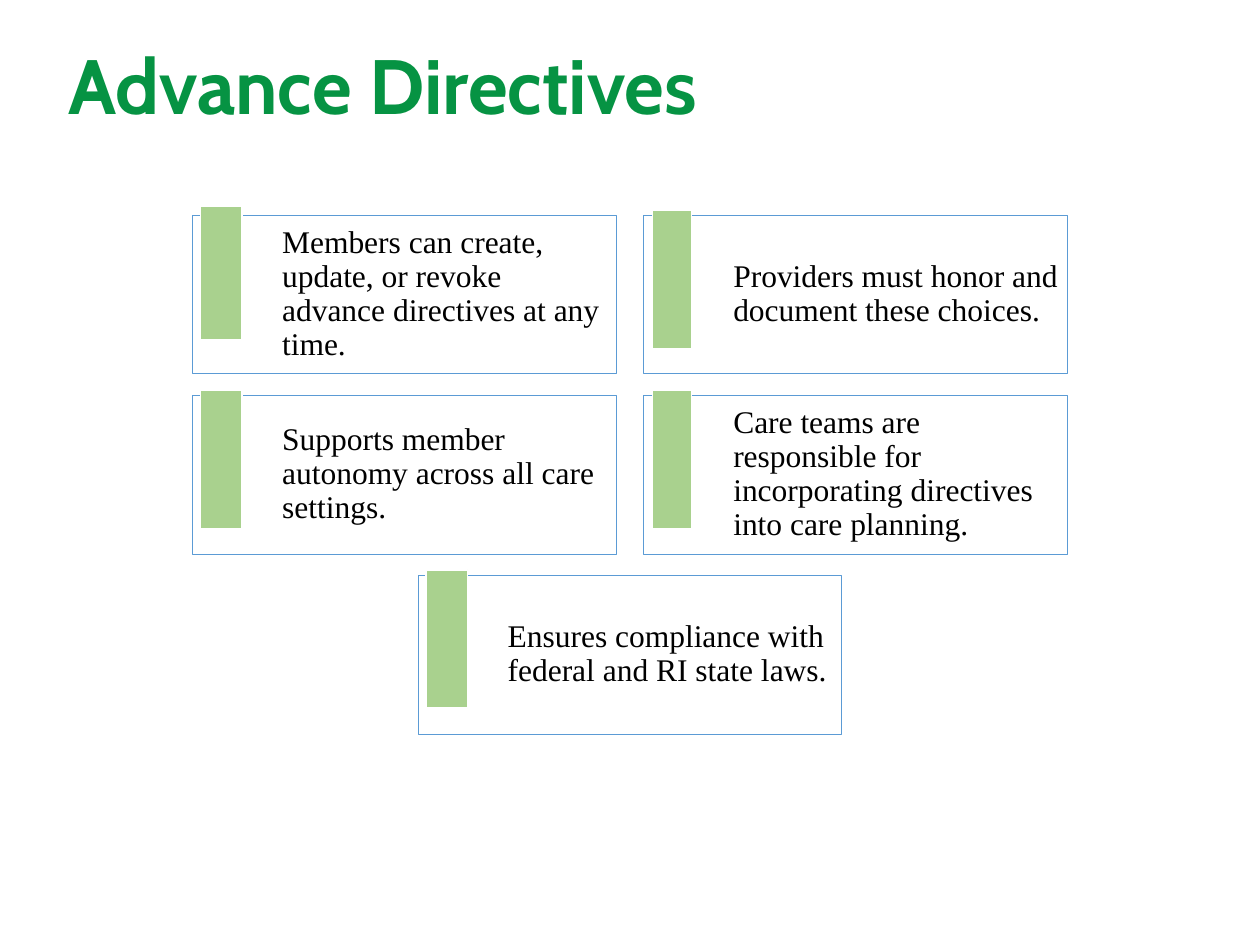
"""Build the Advance Directives slide: a title over centred rows of accented cards."""
from dataclasses import dataclass

from lxml.etree import SubElement
from pptx import Presentation
from pptx.dml.color import RGBColor as RGB
from pptx.enum.shapes import MSO_SHAPE as SHAPE
from pptx.enum.text import MSO_ANCHOR as ANCHOR, MSO_AUTO_SIZE as AUTO, PP_ALIGN as ALIGN
from pptx.oxml.ns import qn
from pptx.util import Pt

TITLE = "Advance Directives"
WIDE, NARROW = 23.6, 22.3
ROWS = [
    [
        {"text": "Members can create, update, or revoke advance directives at any time.",
         "bar": (4.5, -5, WIDE, 76.3)},
        {"text": "Providers must honor and document these choices.",
         "bar": (5, -2.9, NARROW, 79.2)},
    ],
    [
        {"text": "Supports member autonomy across all care settings.",
         "bar": (4.5, -2.9, WIDE, 79.2)},
        {"text": "Care teams are responsible for incorporating directives into care planning.",
         "bar": (5, -2.9, NARROW, 79.2)},
    ],
    [
        {"text": "Ensures compliance with federal and RI state laws.",
         "bar": (4.5, -3.2, WIDE, 79.2)},
    ],
]

SLIDE_W, SLIDE_H = 720, 540
CARD_W, CARD_H = 242, 90.7
GAP_X, GAP_Y = 15.8, 12.2
TOP = 123


@dataclass(frozen=True)
class Theme:
    title_font: str = "Cabin"
    body_font: str = "Times New Roman"
    title_size: float = 44
    body_size: float = 18
    title: str = "069343"
    text: str = "000000"
    card: str = "FFFFFF"
    card_line: str = "5B9BD5"
    bar: str = "A9D18E"
    bar_line: str = "FFFFFF"


THEME = Theme()


def write(sp, text, *, font, size, color, bold=False, insets=(7.2, 3.6, 7.2, 3.6)):
    tf = sp.text_frame
    tf.word_wrap = True
    tf.auto_size = AUTO.NONE
    tf.vertical_anchor = ANCHOR.MIDDLE
    tf.margin_left, tf.margin_top, tf.margin_right, tf.margin_bottom = map(Pt, insets)
    p = tf.paragraphs[0]
    p.alignment = ALIGN.LEFT
    p.line_spacing = 0.9
    r = p.add_run()
    r.text = text
    r.font.name, r.font.size, r.font.bold = font, Pt(size), bold
    r.font.color.rgb = RGB.from_string(color)


def add_rect(s, box, *, fill, line, weight, alpha=None):
    sp = s.shapes.add_shape(SHAPE.RECTANGLE, *map(Pt, box))
    sp.shadow.inherit = False
    sp.fill.solid()
    sp.fill.fore_color.rgb = RGB.from_string(fill)
    sp.line.color.rgb = RGB.from_string(line)
    sp.line.width = Pt(weight)
    if alpha is not None:
        clr = sp.fill._xPr.find(qn("a:solidFill"))[0]
        SubElement(clr, qn("a:alpha")).set("val", str(alpha * 1000))
    return sp


def add_card(s, x, y, card):
    sp = add_rect(s, (x, y, CARD_W, CARD_H), fill=THEME.card, line=THEME.card_line,
                  weight=0.5, alpha=40)
    write(sp, card["text"], font=THEME.body_font, size=THEME.body_size,
          color=THEME.text, insets=(51.1, 5, 5, 5))
    dx, dy, w, h = card["bar"]
    add_rect(s, (x + dx, y + dy, w, h), fill=THEME.bar, line=THEME.bar_line, weight=1)


def main():
    prs = Presentation()
    prs.slide_width, prs.slide_height = Pt(SLIDE_W), Pt(SLIDE_H)
    s = prs.slides.add_slide(prs.slide_layouts[5])

    title = s.shapes.title
    title.left, title.top, title.width, title.height = map(Pt, (31.7, 12.2, 620.6, 78.5))
    write(title, TITLE, font=THEME.title_font, size=THEME.title_size,
          color=THEME.title, bold=True)

    for i, row in enumerate(ROWS):
        row_w = len(row) * (CARD_W + GAP_X) - GAP_X
        left = (SLIDE_W - row_w) / 2
        for j, card in enumerate(row):
            add_card(s, left + j * (CARD_W + GAP_X), TOP + i * (CARD_H + GAP_Y), card)

    prs.save("out.pptx")


if __name__ == "__main__":
    main()
